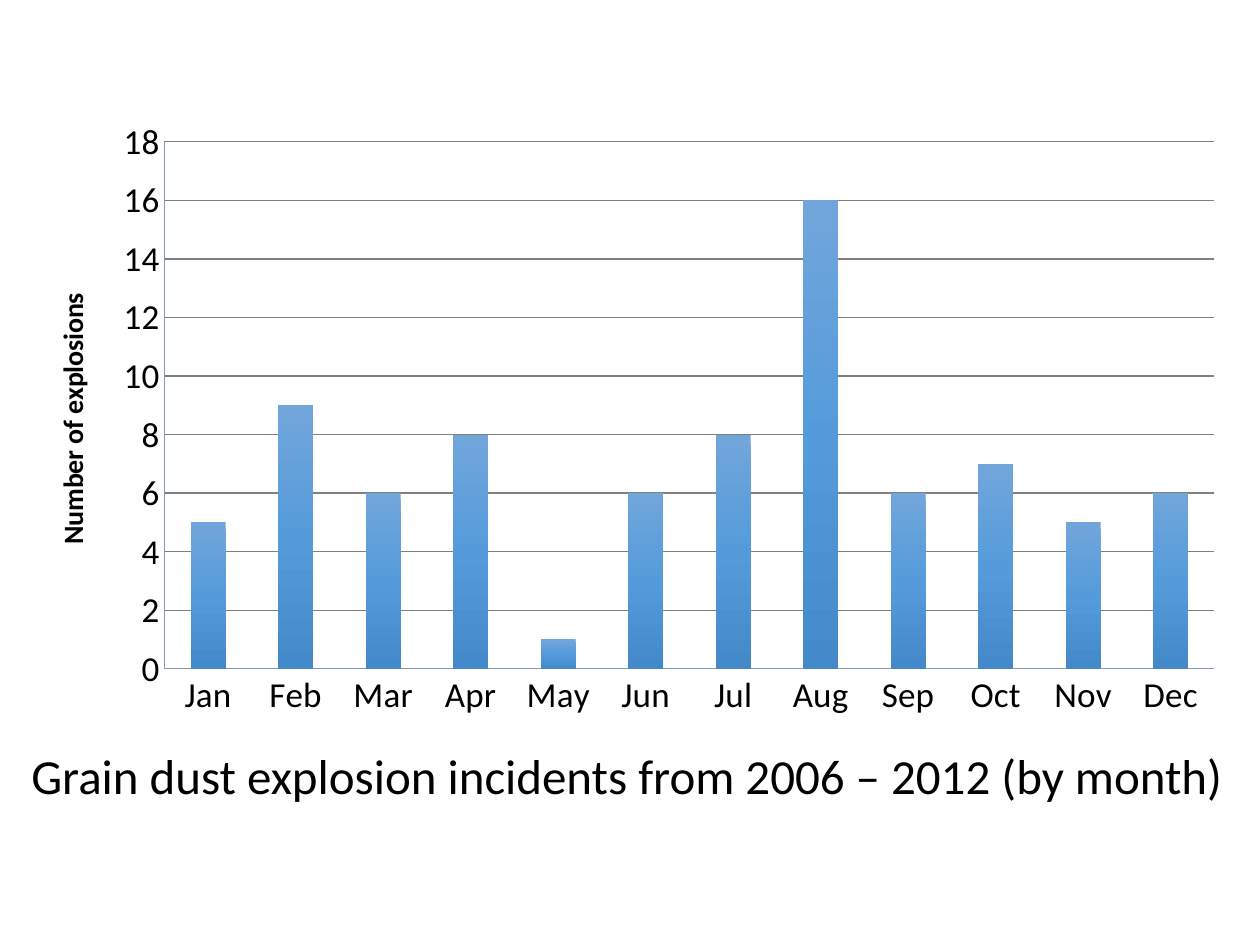
from copy import deepcopy

from lxml import etree
from pptx import Presentation
from pptx.chart.data import CategoryChartData
from pptx.dml.color import RGBColor
from pptx.enum.chart import XL_CHART_TYPE as ChartType, XL_TICK_MARK as TickMark
from pptx.enum.text import MSO_ANCHOR as Anchor, PP_ALIGN as Align
from pptx.oxml.ns import qn
from pptx.util import Cm, Pt

# Content
CAPTION = "Grain dust explosion incidents from 2006 – 2012 (by month)"
AXIS_TITLE = "Number of explosions"
EXPLOSIONS = {
    "Jan": 5, "Feb": 9, "Mar": 6, "Apr": 8, "May": 1, "Jun": 6,
    "Jul": 8, "Aug": 16, "Sep": 6, "Oct": 7, "Nov": 5, "Dec": 6,
}

# Style
FONT = "Calibri"
BLACK = RGBColor(0x00, 0x00, 0x00)
GRID_GREY = RGBColor(0x80, 0x80, 0x80)
AXIS_BLUE = RGBColor(0x84, 0x97, 0xB0)
BAR_STOPS = [
    (0, RGBColor(0x71, 0xA6, 0xDB)),
    (0.5, RGBColor(0x55, 0x9B, 0xDB)),
    (1, RGBColor(0x44, 0x8A, 0xCA)),
]
PLOT_AREA = {"x": 0.11, "y": 0.06, "w": 0.87, "h": 0.85}  # shares of the chart


def style_font(font, size, bold=False):
    font.name, font.size, font.bold = FONT, Pt(size), bold
    font.color.rgb = BLACK


def write_text(frame, text, *, size, bold=False, align=Align.CENTER):
    paragraph = frame.paragraphs[0]
    paragraph.alignment = align
    run = paragraph.add_run()
    run.text = text
    style_font(run.font, size, bold)


def style_line(line, color):
    line.color.rgb = color
    line.width = Pt(0.75)


def fill_bars(fill):
    fill.gradient()
    fill.gradient_angle = 270
    first_stop = fill.gradient_stops[0]._gs
    first_stop.addnext(deepcopy(first_stop))
    for stop, (position, color) in zip(fill.gradient_stops, BAR_STOPS):
        stop.position = position
        stop.color.rgb = color


def place_plot(chart):
    plot_area = chart._chartSpace.chart.plotArea
    for old in plot_area.findall(qn("c:layout")):
        plot_area.remove(old)
    layout = etree.Element(qn("c:layout"))
    plot_area.insert(0, layout)
    manual = etree.SubElement(layout, qn("c:manualLayout"))
    settings = {"layoutTarget": "inner", "xMode": "edge", "yMode": "edge", **PLOT_AREA}
    for name, value in settings.items():
        etree.SubElement(manual, qn(f"c:{name}")).set("val", str(value))


presentation = Presentation()
presentation.slide_width, presentation.slide_height = Cm(25.4), Cm(19.05)
slide = presentation.slides.add_slide(presentation.slide_layouts[6])

# Caption below the chart
caption = slide.shapes.add_textbox(Cm(0.25), Cm(14.91), Cm(24.77), Cm(1.45)).text_frame
caption.word_wrap = True
caption.vertical_anchor = Anchor.TOP
write_text(caption, CAPTION, size=28)

# Monthly column chart
data = CategoryChartData()
data.categories = list(EXPLOSIONS)
data.add_series("Series 1", list(EXPLOSIONS.values()))
chart = slide.shapes.add_chart(
    ChartType.COLUMN_STACKED, Cm(0.64), Cm(2.11), Cm(24.33), Cm(12.5), data
).chart
chart.has_legend = False
chart.has_title = False
style_font(chart.font, 16)
place_plot(chart)

# Bars
columns = chart.plots[0]
columns.gap_width, columns.overlap = 150, 100
columns.vary_by_categories = False
fill_bars(columns.series[0].format.fill)

# Axes
months, counts = chart.category_axis, chart.value_axis
for axis in (months, counts):
    axis.major_tick_mark = axis.minor_tick_mark = TickMark.NONE
    style_font(axis.tick_labels.font, 20)
    style_line(axis.format.line, AXIS_BLUE)
counts.minimum_scale, counts.maximum_scale, counts.major_unit = 0, 18, 2
counts.has_major_gridlines = True
style_line(counts.major_gridlines.format.line, GRID_GREY)
write_text(counts.axis_title.text_frame, AXIS_TITLE, size=16, bold=True)

presentation.save("out.pptx")
